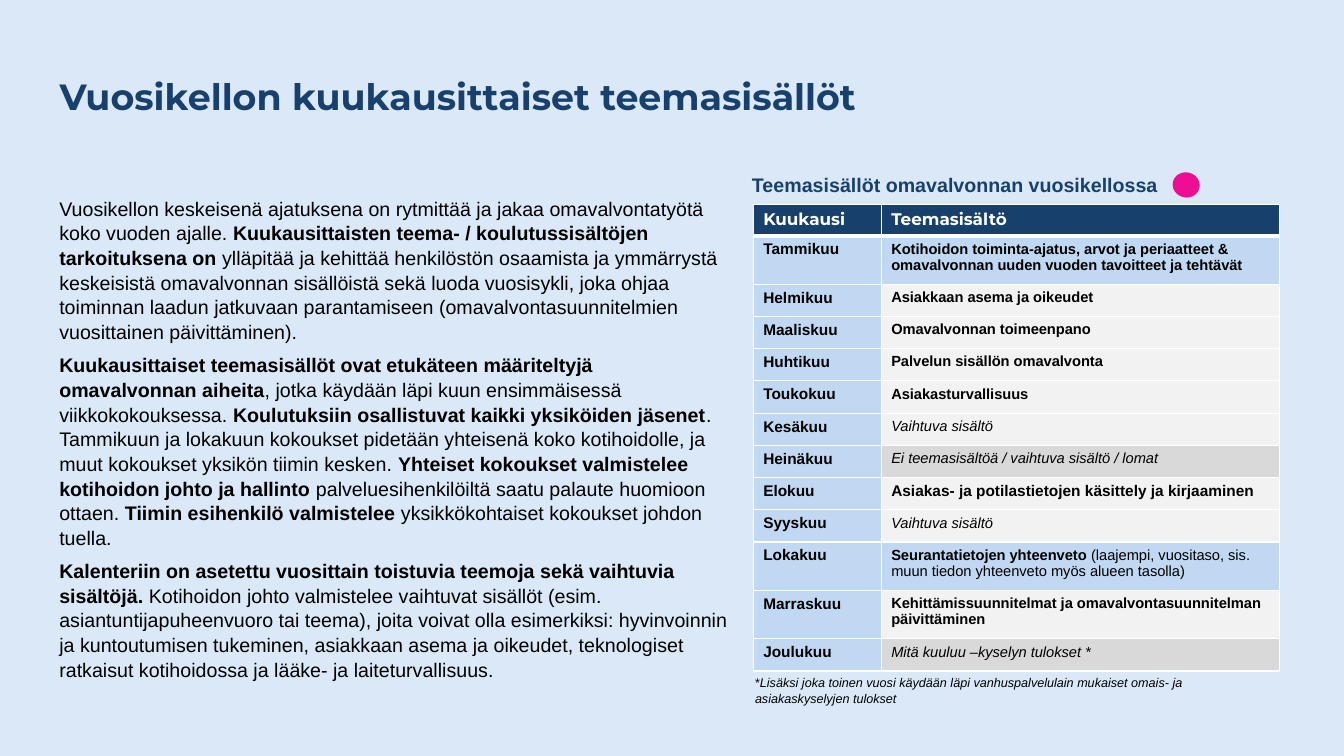
"""Build a slide on the monthly themes of a self-monitoring year clock."""
from dataclasses import dataclass

from lxml import etree
from pptx import Presentation
from pptx.dml.color import RGBColor
from pptx.enum import shapes, text
from pptx.oxml import ns
from pptx.util import Inches, Pt

PLAIN, BOLD, ITALIC = "plain", "bold", "italic"

TITLE = "Vuosikellon kuukausittaiset teemasisällöt"
HEADING = "Teemasisällöt omavalvonnan vuosikellossa"
BODY = [
    [
        ("Vuosikellon keskeisenä ajatuksena on rytmittää ja jakaa omavalvontatyötä koko vuoden ajalle. ", PLAIN),
        ("Kuukausittaisten teema- / koulutussisältöjen tarkoituksena on ", BOLD),
        ("ylläpitää ja kehittää henkilöstön osaamista ja ymmärrystä keskeisistä omavalvonnan "
         "sisällöistä sekä luoda vuosisykli, joka ohjaa toiminnan laadun jatkuvaan parantamiseen "
         "(omavalvontasuunnitelmien vuosittainen päivittäminen).", PLAIN),
    ],
    [
        ("Kuukausittaiset teemasisällöt ovat etukäteen määriteltyjä omavalvonnan aiheita", BOLD),
        (", jotka käydään läpi kuun ensimmäisessä viikkokokouksessa. ", PLAIN),
        ("Koulutuksiin osallistuvat kaikki yksiköiden jäsenet", BOLD),
        (". Tammikuun ja lokakuun kokoukset pidetään yhteisenä koko kotihoidolle, ja muut "
         "kokoukset yksikön tiimin kesken. ", PLAIN),
        ("Yhteiset kokoukset valmistelee kotihoidon johto ja hallinto ", BOLD),
        ("palveluesihenkilöiltä saatu palaute huomioon ottaen. ", PLAIN),
        ("Tiimin esihenkilö valmistelee ", BOLD),
        ("yksikkökohtaiset kokoukset johdon tuella.", PLAIN),
    ],
    [
        ("Kalenteriin on asetettu vuosittain toistuvia teemoja sekä vaihtuvia sisältöjä. ", BOLD),
        ("Kotihoidon johto valmistelee vaihtuvat sisällöt (esim. asiantuntijapuheenvuoro tai teema), "
         "joita voivat olla esimerkiksi: hyvinvoinnin ja kuntoutumisen tukeminen, asiakkaan asema ja "
         "oikeudet, teknologiset ratkaisut kotihoidossa ja lääke- ja laiteturvallisuus.", PLAIN),
    ],
]
FOOTNOTE = [
    ("*", PLAIN),
    ("Lisäksi joka toinen vuosi käydään läpi vanhuspalvelulain mukaiset omais- ja "
     "asiakaskyselyjen tulokset", ITALIC),
]


@dataclass(frozen=True)
class Theme:
    """Colours, fonts and type sizes of the slide."""
    navy: str = "17406D"
    sky: str = "C1D8F2"
    backdrop: str = "DAE8F7"
    pale: str = "F2F2F2"
    grey: str = "D9D9D9"
    pink: str = "ED0E93"
    white: str = "FFFFFF"
    black: str = "000000"
    display: str = "Montserrat"
    sans: str = "Arial"
    title: float = 26
    body: float = 14
    header: float = 12
    month: float = 11
    topic: float = 10.5
    note: float = 9


THEME = Theme()
HEADER = ("Kuukausi", "Teemasisältö")
MONTHS = [
    ("Tammikuu", [("Kotihoidon toiminta-ajatus, arvot ja periaatteet & omavalvonnan uuden vuoden "
                   "tavoitteet ja tehtävät", BOLD)], THEME.sky),
    ("Helmikuu", [("Asiakkaan asema ja oikeudet", BOLD)], THEME.pale),
    ("Maaliskuu", [("Omavalvonnan toimeenpano", BOLD)], THEME.pale),
    ("Huhtikuu", [("Palvelun sisällön omavalvonta", BOLD)], THEME.pale),
    ("Toukokuu", [("Asiakasturvallisuus", BOLD)], THEME.pale),
    ("Kesäkuu", [("Vaihtuva sisältö", ITALIC)], THEME.pale),
    ("Heinäkuu", [("Ei teemasisältöä / vaihtuva sisältö / lomat", ITALIC)], THEME.grey),
    ("Elokuu", [("Asiakas- ja potilastietojen käsittely ja kirjaaminen", BOLD)], THEME.pale),
    ("Syyskuu", [("Vaihtuva sisältö", ITALIC)], THEME.pale),
    ("Lokakuu", [("Seurantatietojen yhteenveto ", BOLD),
                 ("(laajempi, vuositaso, sis. muun tiedon yhteenveto myös alueen tasolla)", PLAIN)],
     THEME.sky),
    ("Marraskuu", [("Kehittämissuunnitelmat ja omavalvontasuunnitelman päivittäminen", BOLD)],
     THEME.pale),
    ("Joulukuu", [("Mitä kuuluu –kyselyn tulokset *", ITALIC)], THEME.grey),
]
LARGE_TOPICS = {"Elokuu"}
TALL_MONTHS = {"Tammikuu", "Lokakuu", "Marraskuu"}
COLUMN_WIDTHS = (1.27, 3.95)
HEADER_HEIGHT, ROW_HEIGHT, TALL_HEIGHT = 0.31, 0.32, 0.48


def add_spans(para, spans, size, colour=THEME.black, font=THEME.sans):
    for wording, style in spans:
        span = para.add_run()
        span.text = wording
        span.font.name = font
        span.font.size = Pt(size)
        span.font.bold = style == BOLD
        span.font.italic = style == ITALIC
        span.font.color.rgb = RGBColor.from_string(colour)


def add_box(page, place, paragraphs, size, colour=THEME.black, spacing=1.0):
    frame = page.shapes.add_textbox(*map(Inches, place)).text_frame
    frame.word_wrap = True
    for index, spans in enumerate(paragraphs):
        para = frame.add_paragraph() if index else frame.paragraphs[0]
        para.space_before = Pt(6 if index else 0)
        para.line_spacing = spacing
        add_spans(para, spans, size, colour)


def fill_cell(cell, spans, fill, size, bottom=1, **look):
    add_spans(cell.text_frame.paragraphs[0], spans, size, **look)
    properties = cell._tc.get_or_add_tcPr()
    for side, width in (("L", 1), ("R", 1), ("T", 1), ("B", bottom)):
        edge = etree.SubElement(properties, ns.qn(f"a:ln{side}"), w=str(Pt(width)))
        paint = etree.SubElement(edge, ns.qn("a:solidFill"))
        etree.SubElement(paint, ns.qn("a:srgbClr"), val=THEME.white)
    cell.fill.solid()
    cell.fill.fore_color.rgb = RGBColor.from_string(fill)


def add_title(page):
    title = page.shapes.title
    title.left, title.top, title.width, title.height = map(Inches, (0.49, 0.5, 12.35, 0.95))
    title.text_frame.vertical_anchor = text.MSO_ANCHOR.MIDDLE
    para = title.text_frame.paragraphs[0]
    para.alignment = text.PP_ALIGN.LEFT
    para.line_spacing = 0.9
    add_spans(para, [(TITLE, BOLD)], THEME.title, THEME.navy, THEME.display)


def add_calendar(page):
    heights = [HEADER_HEIGHT] + [TALL_HEIGHT if month in TALL_MONTHS else ROW_HEIGHT
                                 for month, _, _ in MONTHS]
    place = (7.47, 2.03, sum(COLUMN_WIDTHS), sum(heights))
    table = page.shapes.add_table(len(heights), len(COLUMN_WIDTHS), *map(Inches, place)).table
    for column, width in zip(table.columns, COLUMN_WIDTHS):
        column.width = Inches(width)
    for row, height in zip(table.rows, heights):
        row.height = Inches(height)
    for index, label in enumerate(HEADER):
        fill_cell(table.cell(0, index), [(label, BOLD)], THEME.navy, THEME.header,
                  bottom=3, colour=THEME.white, font=THEME.display)
    for index, (month, topic, fill) in enumerate(MONTHS, start=1):
        size = THEME.month if month in LARGE_TOPICS else THEME.topic
        fill_cell(table.cell(index, 0), [(month, BOLD)], THEME.sky, THEME.month)
        fill_cell(table.cell(index, 1), topic, fill, size)


def add_marker(page):
    place = map(Inches, (11.64, 1.7, 0.25, 0.27))
    marker = page.shapes.add_shape(shapes.MSO_SHAPE.OVAL, *place)
    marker.rotation = 283.8
    marker.shadow.inherit = False
    marker.fill.solid()
    marker.fill.fore_color.rgb = RGBColor.from_string(THEME.pink)
    marker.line.fill.background()


def main():
    deck = Presentation()
    deck.slide_width, deck.slide_height = Inches(13.33), Inches(7.5)
    page = deck.slides.add_slide(deck.slide_layouts[5])
    page.background.fill.solid()
    page.background.fill.fore_color.rgb = RGBColor.from_string(THEME.backdrop)
    add_title(page)
    add_box(page, (0.49, 1.89, 6.86, 5.16), BODY, THEME.body, spacing=1.05)
    add_box(page, (7.36, 1.67, 5.57, 0.34), [[(HEADING, BOLD)]], THEME.body, THEME.navy)
    add_box(page, (7.39, 6.65, 5.3, 0.4), [FOOTNOTE], THEME.note)
    add_marker(page)
    add_calendar(page)
    deck.save("out.pptx")


if __name__ == "__main__":
    main()
